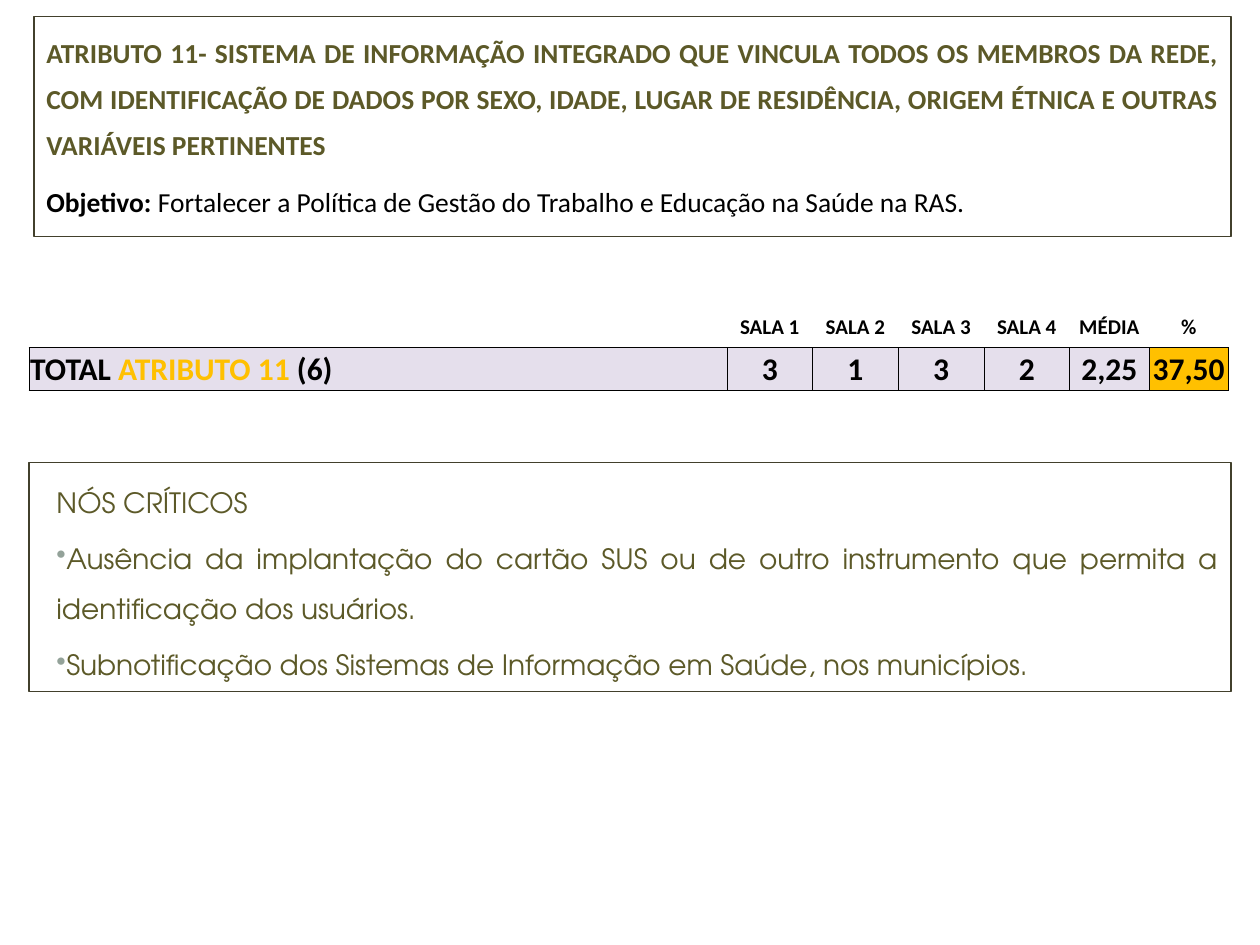
"""Build the slide on attribute 11: objective, room scores and critical points."""
import lxml.etree
import pptx
import pptx.dml.color
import pptx.enum.shapes
import pptx.enum.text
import pptx.oxml.ns
import pptx.util

Inches, Pt = pptx.util.Inches, pptx.util.Pt
ALIGN = pptx.enum.text.PP_ALIGN
COLORS = {"olive": "5C5928", "border": "42402C", "black": "000000", "white": "FFFFFF",
          "lilac": "E5DFEC", "gold": "FFC000", "bullet": "93A299"}
BODY_FONT, NOTE_FONT = "Calibri", "TeX Gyre Adventor"

HEADING = [
    [("ATRIBUTO 11- SISTEMA DE INFORMAÇÃO INTEGRADO QUE VINCULA TODOS OS MEMBROS DA REDE, "
      "COM IDENTIFICAÇÃO DE DADOS POR SEXO, IDADE, LUGAR DE RESIDÊNCIA, ORIGEM ÉTNICA E OUTRAS "
      "VARIÁVEIS PERTINENTES", "olive", True)],
    [("Objetivo: ", "black", True),
     ("Fortalecer a Política de Gestão do Trabalho e Educação na Saúde na RAS.", "black", False)],
]
CRITICAL_POINTS = [
    [("NÓS CRÍTICOS", "olive", False)],
    [("Ausência da implantação do cartão SUS ou de outro instrumento que permita a "
      "identificação dos usuários.", "olive", False)],
    [("Subnotificação dos Sistemas de Informação em Saúde, nos municípios.", "olive", False)],
]
TOTAL_LABEL = [("TOTAL ", "black", True), ("ATRIBUTO 11 ", "gold", True), ("(6)", "black", True)]
SCORES = [("SALA 1", "3"), ("SALA 2", "1"), ("SALA 3", "3"), ("SALA 4", "2"),
          ("MÉDIA", "2,25"), ("%", "37,50")]
LABEL_WIDTHS = [3.98, 0.62, 0.94]
SCORE_WIDTHS = [0.68] * 4 + [0.63] * 2
ROW_HEIGHT = 0.34


def rgb(name):
    return pptx.dml.color.RGBColor.from_string(COLORS[name])


def add_runs(paragraph, runs, font_name, size):
    for text, color, bold in runs:
        run = paragraph.add_run()
        run.text = text
        run.font.name, run.font.size, run.font.bold = font_name, Pt(size), bold
        run.font.color.rgb = rgb(color)


def add_color(parent, name):
    lxml.etree.SubElement(parent, pptx.oxml.ns.qn("a:srgbClr")).set("val", COLORS[name])


def add_bullet(paragraph):
    properties = paragraph._p.get_or_add_pPr()
    add_color(lxml.etree.SubElement(properties, pptx.oxml.ns.qn("a:buClr")), "bullet")
    lxml.etree.SubElement(properties, pptx.oxml.ns.qn("a:buChar")).set("char", "•")


def add_panel(slide, box, paragraphs, font_name, size, line_spacing, gap, indent=0, bullets=False):
    shape = slide.shapes.add_shape(pptx.enum.shapes.MSO_SHAPE.RECTANGLE, *map(Inches, box))
    shape.shadow.inherit = False
    shape.fill.solid()
    shape.fill.fore_color.rgb = rgb("white")
    shape.line.color.rgb = rgb("border")
    shape.line.width = Pt(0.75)
    frame = shape.text_frame
    frame.word_wrap = True
    frame.vertical_anchor = pptx.enum.text.MSO_ANCHOR.TOP
    for index, runs in enumerate(paragraphs):
        paragraph = frame.add_paragraph() if index else frame.paragraphs[0]
        paragraph.alignment = ALIGN.JUSTIFY
        paragraph.line_spacing = line_spacing
        properties = paragraph._p.get_or_add_pPr()
        properties.set("marL", str(Inches(indent)))
        properties.set("indent", "0")
        if index:
            paragraph.space_before = Pt(gap)
            if bullets:
                add_bullet(paragraph)
        add_runs(paragraph, runs, font_name, size)


def set_borders(cell, sides):
    properties = cell._tc.get_or_add_tcPr()
    for position, side in enumerate(sides):
        line = lxml.etree.Element(pptx.oxml.ns.qn(f"a:ln{side}"), w=str(Pt(0.5)))
        add_color(lxml.etree.SubElement(line, pptx.oxml.ns.qn("a:solidFill")), "black")
        properties.insert(position, line)


def fill_cell(cell, runs, size, alignment):
    paragraph = cell.text_frame.paragraphs[0]
    paragraph.alignment = alignment
    add_runs(paragraph, runs, BODY_FONT, size)


def add_score_table(slide, left, top):
    widths = LABEL_WIDTHS + SCORE_WIDTHS
    table = slide.shapes.add_table(2, len(widths), Inches(left), Inches(top),
                                   Inches(sum(widths)), Inches(2 * ROW_HEIGHT)).table
    table.first_row = table.horz_banding = False
    for column, width in zip(table.columns, widths):
        column.width = Inches(width)
    for row_index, row in enumerate(table.rows):
        row.height = Inches(ROW_HEIGHT)
        for column_index, cell in enumerate(row.cells):
            cell.margin_left = cell.margin_right = cell.margin_top = Inches(0.01)
            cell.margin_bottom = 0
            cell.vertical_anchor = pptx.enum.text.MSO_ANCHOR.MIDDLE
            if row_index:
                cell.fill.solid()
                is_last = column_index == len(widths) - 1
                cell.fill.fore_color.rgb = rgb("gold" if is_last else "lilac")
            else:
                cell.fill.background()
            set_borders(cell, "LRTB" if row_index else "B")
    first_score = len(LABEL_WIDTHS)
    table.cell(1, 0).merge(table.cell(1, first_score - 1))
    fill_cell(table.cell(1, 0), TOTAL_LABEL, 18, ALIGN.LEFT)
    for column_index, (title, score) in enumerate(SCORES, first_score):
        fill_cell(table.cell(0, column_index), [(title, "black", True)], 12, ALIGN.CENTER)
        fill_cell(table.cell(1, column_index), [(score, "black", True)], 18, ALIGN.CENTER)


def main():
    presentation = pptx.Presentation()
    presentation.slide_width, presentation.slide_height = Inches(10), Inches(7.5)
    slide = presentation.slides.add_slide(presentation.slide_layouts[6])
    add_panel(slide, (0.27, 0.13, 9.5, 1.75), HEADING, BODY_FONT, 15.7, 1.4, 6.3)
    add_panel(slide, (0.23, 3.67, 9.54, 1.82), CRITICAL_POINTS, NOTE_FONT, 16, 1.5, 3.2,
              indent=0.12, bullets=True)
    add_score_table(slide, 0.23, 2.42)
    presentation.save("out.pptx")


if __name__ == "__main__":
    main()
